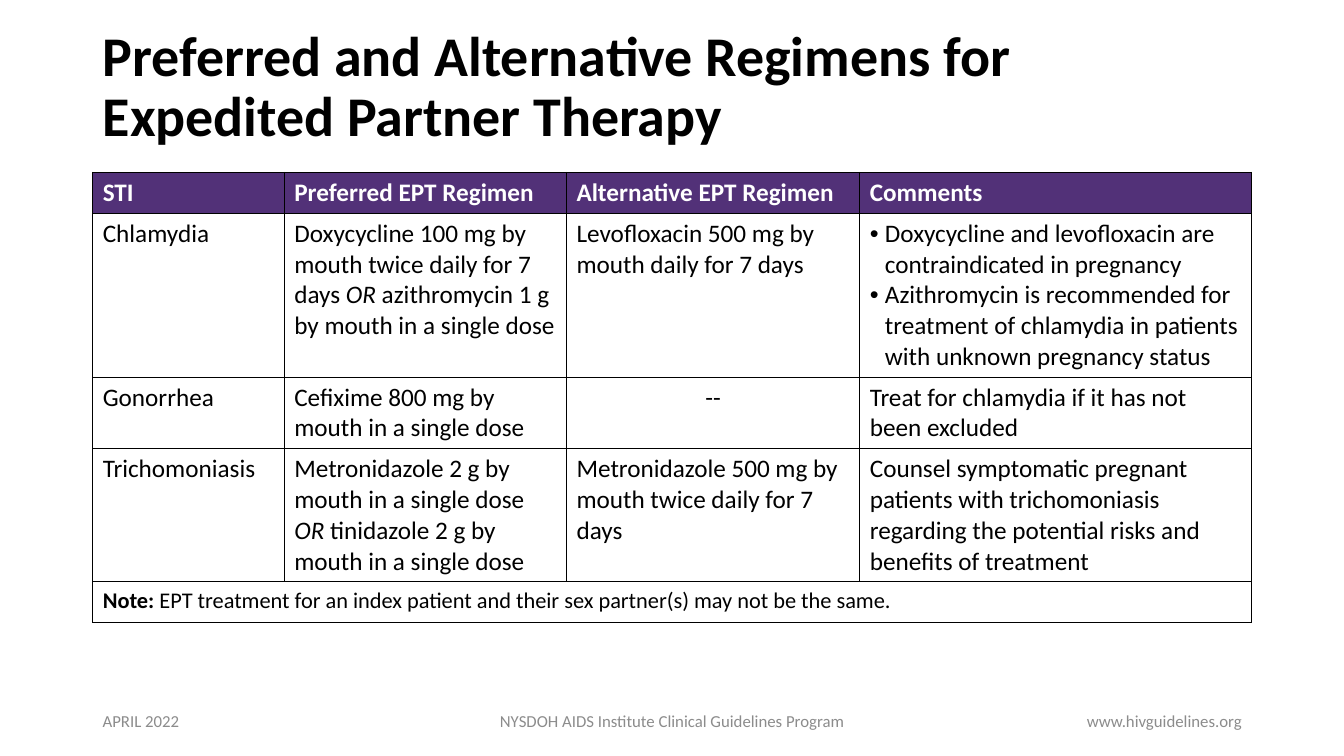
from lxml.etree import SubElement
from pptx import Presentation
from pptx.dml.color import RGBColor
from pptx.enum.text import MSO_ANCHOR, MSO_AUTO_SIZE, PP_ALIGN
from pptx.oxml.ns import qn
from pptx.util import Pt

BLACK, WHITE, PURPLE, GRAY = "000000", "FFFFFF", "523178", "8C8C8C"
LEFT, WIDTH = 66.24, 828


def write_text(para, text, size=18, color=BLACK, bold=False, align=PP_ALIGN.LEFT, mark="italic"):
    """Fill a paragraph; parts between asterisks get the font property named by mark."""
    para.alignment = align
    for index, part in enumerate(text.split("*")):
        if part:
            span = para.add_run()
            span.text = part
            span.font.name = "Calibri"
            span.font.size = Pt(size)
            span.font.bold = bold
            span.font.color.rgb = RGBColor.from_string(color)
            if index % 2:
                setattr(span.font, mark, True)


def add_borders(cell, color=BLACK, width=1):
    properties = cell._tc.get_or_add_tcPr()
    for side in ("lnL", "lnR", "lnT", "lnB"):
        line = SubElement(properties, qn(f"a:{side}"), w=str(Pt(width)))
        SubElement(SubElement(line, qn("a:solidFill")), qn("a:srgbClr"), val=color)


deck = Presentation()
deck.slide_width, deck.slide_height = Pt(960), Pt(540)
page = deck.slides.add_slide(deck.slide_layouts[5])

# Title
title = page.shapes.title
title.left, title.top, title.width, title.height = Pt(LEFT), Pt(10.8), Pt(765.4), Pt(104.4)
title.text_frame.word_wrap = True
title.text_frame.auto_size = MSO_AUTO_SIZE.NONE
title.text_frame.vertical_anchor = MSO_ANCHOR.MIDDLE
heading = title.text_frame.paragraphs[0]
heading.line_spacing = 0.9
write_text(heading, "Preferred and Alternative Regimens for Expedited Partner Therapy", size=40, bold=True)

# Regimen table: a list in a cell becomes bullets
regimens = [
    ["STI", "Preferred EPT Regimen", "Alternative EPT Regimen", "Comments"],
    ["Chlamydia",
     "Doxycycline 100 mg by mouth twice daily for 7 days *OR* azithromycin 1 g by mouth in a single dose",
     "Levofloxacin 500 mg by mouth daily for 7 days",
     ["Doxycycline and levofloxacin are contraindicated in pregnancy",
      "Azithromycin is recommended for treatment of chlamydia in patients with unknown pregnancy status"]],
    ["Gonorrhea", "Cefixime 800 mg by mouth in a single dose", "--",
     "Treat for chlamydia if it has not been excluded"],
    ["Trichomoniasis",
     "Metronidazole 2 g by mouth in a single dose *OR* tinidazole 2 g by mouth in a single dose",
     "Metronidazole 500 mg by mouth twice daily for 7 days",
     "Counsel symptomatic pregnant patients with trichomoniasis regarding the potential risks "
     "and benefits of treatment"],
]
column_widths = [136.8, 201.6, 209.5, 280.1]
row_height = 29.2
row_count = len(regimens) + 1
table = page.shapes.add_table(row_count, len(column_widths), Pt(LEFT), Pt(123.1),
                              Pt(WIDTH), Pt(row_height * row_count)).table
table.horz_banding = False
for column, width in zip(table.columns, column_widths):
    column.width = Pt(width)
for row in table.rows:
    row.height = Pt(row_height)
for cell in table.iter_cells():
    add_borders(cell)
    cell.fill.background()

for row_index, regimen in enumerate(regimens):
    is_header = row_index == 0
    for column_index, content in enumerate(regimen):
        cell = table.cell(row_index, column_index)
        if is_header:
            cell.fill.solid()
            cell.fill.fore_color.rgb = RGBColor.from_string(PURPLE)
        bulleted = isinstance(content, list)
        for index, text in enumerate(content if bulleted else [content]):
            para = cell.text_frame.add_paragraph() if index else cell.text_frame.paragraphs[0]
            if bulleted:
                properties = para._p.get_or_add_pPr()
                properties.set("marL", str(Pt(10.8)))
                properties.set("indent", str(-Pt(10.8)))
                SubElement(properties, qn("a:buFont"), typeface="Arial")
                SubElement(properties, qn("a:buChar"), char="•")
            write_text(para, text, color=WHITE if is_header else BLACK, bold=is_header,
                       align=PP_ALIGN.CENTER if text == "--" else PP_ALIGN.LEFT)

note = table.cell(row_count - 1, 0)
note.merge(table.cell(row_count - 1, len(column_widths) - 1))
write_text(note.text_frame.paragraphs[0],
           "*Note: *EPT treatment for an index patient and their sex partner(s) may not be the same.",
           size=16, mark="bold")

# Footer
for text, left, width, align in [
    ("APRIL 2022", LEFT, 216, PP_ALIGN.LEFT),
    ("NYSDOH AIDS Institute Clinical Guidelines Program", 318.2, 324, PP_ALIGN.CENTER),
    ("www.hivguidelines.org", LEFT + WIDTH - 216, 216, PP_ALIGN.RIGHT),
]:
    box = page.shapes.add_textbox(Pt(left), Pt(500.5), Pt(width), Pt(28.8))
    box.text_frame.word_wrap = True
    box.text_frame.vertical_anchor = MSO_ANCHOR.MIDDLE
    write_text(box.text_frame.paragraphs[0], text, size=12, color=GRAY, align=align)

deck.save("out.pptx")
